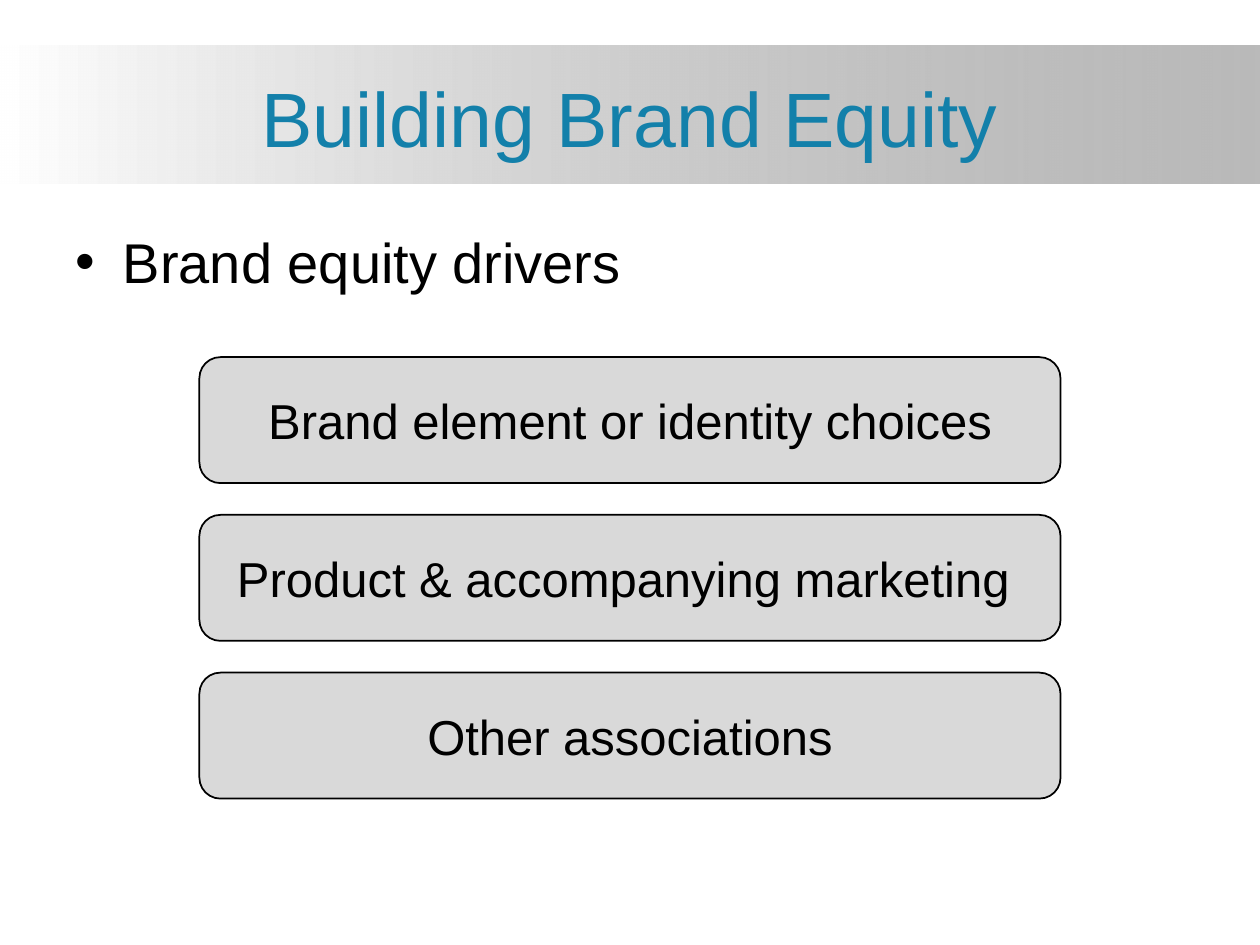
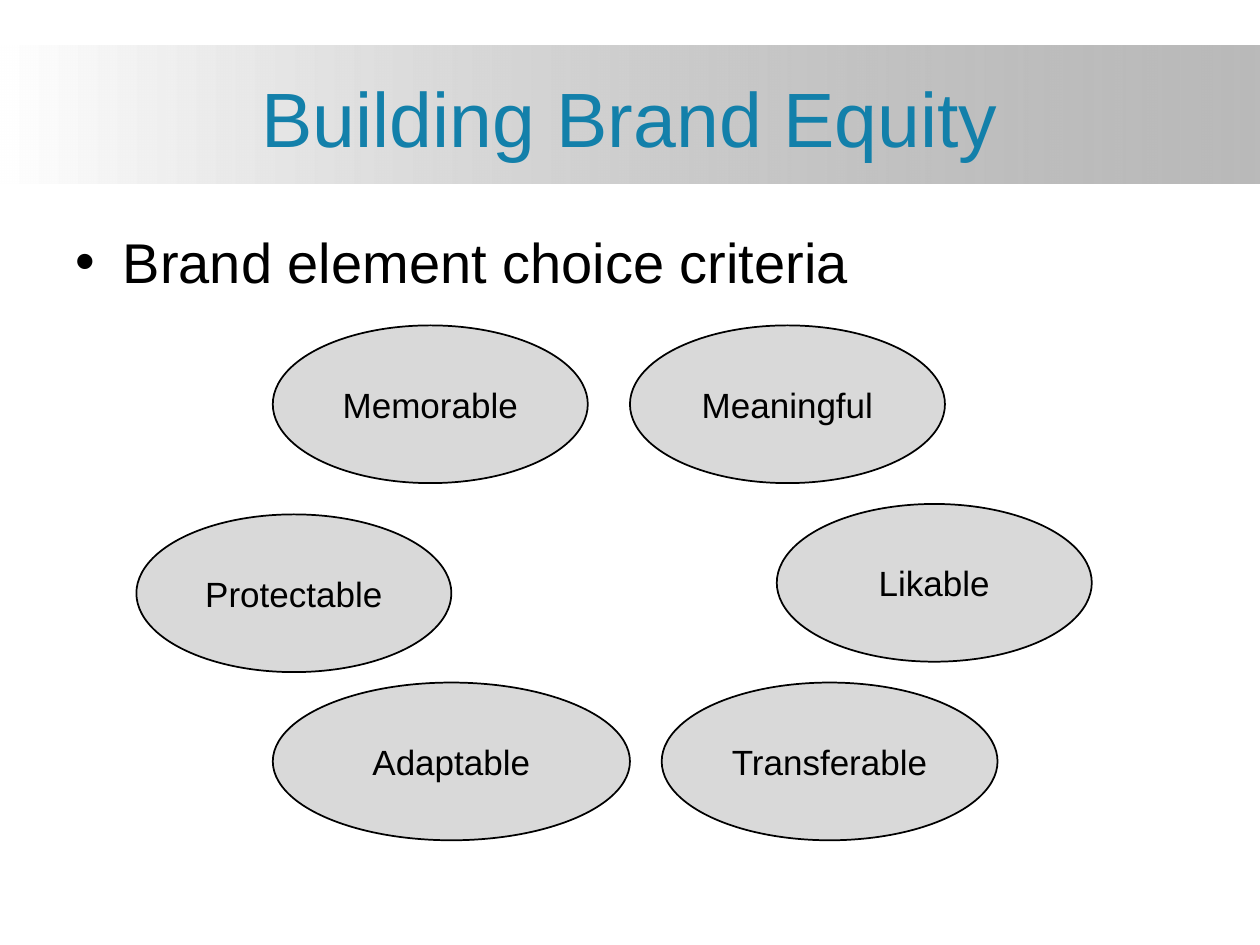
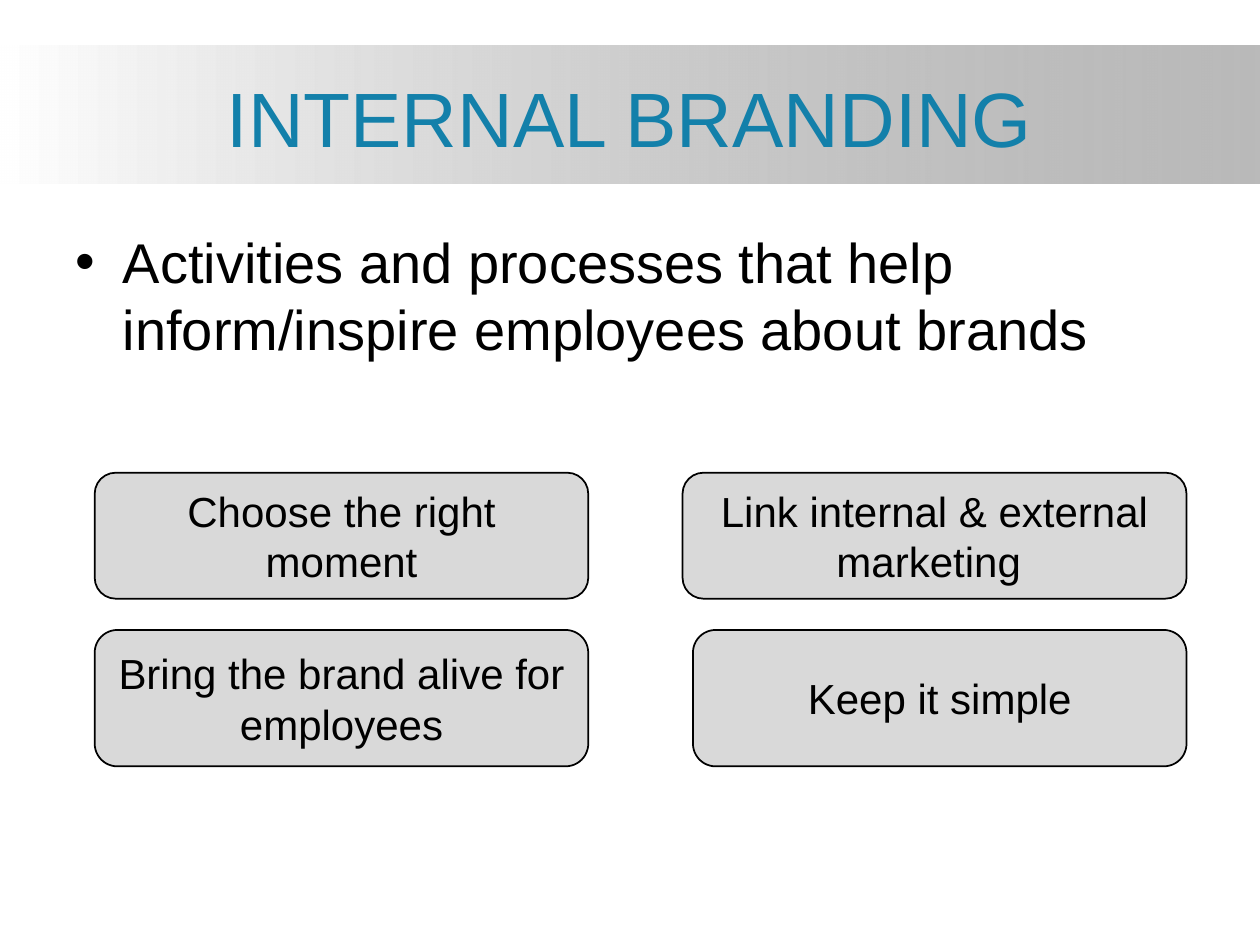
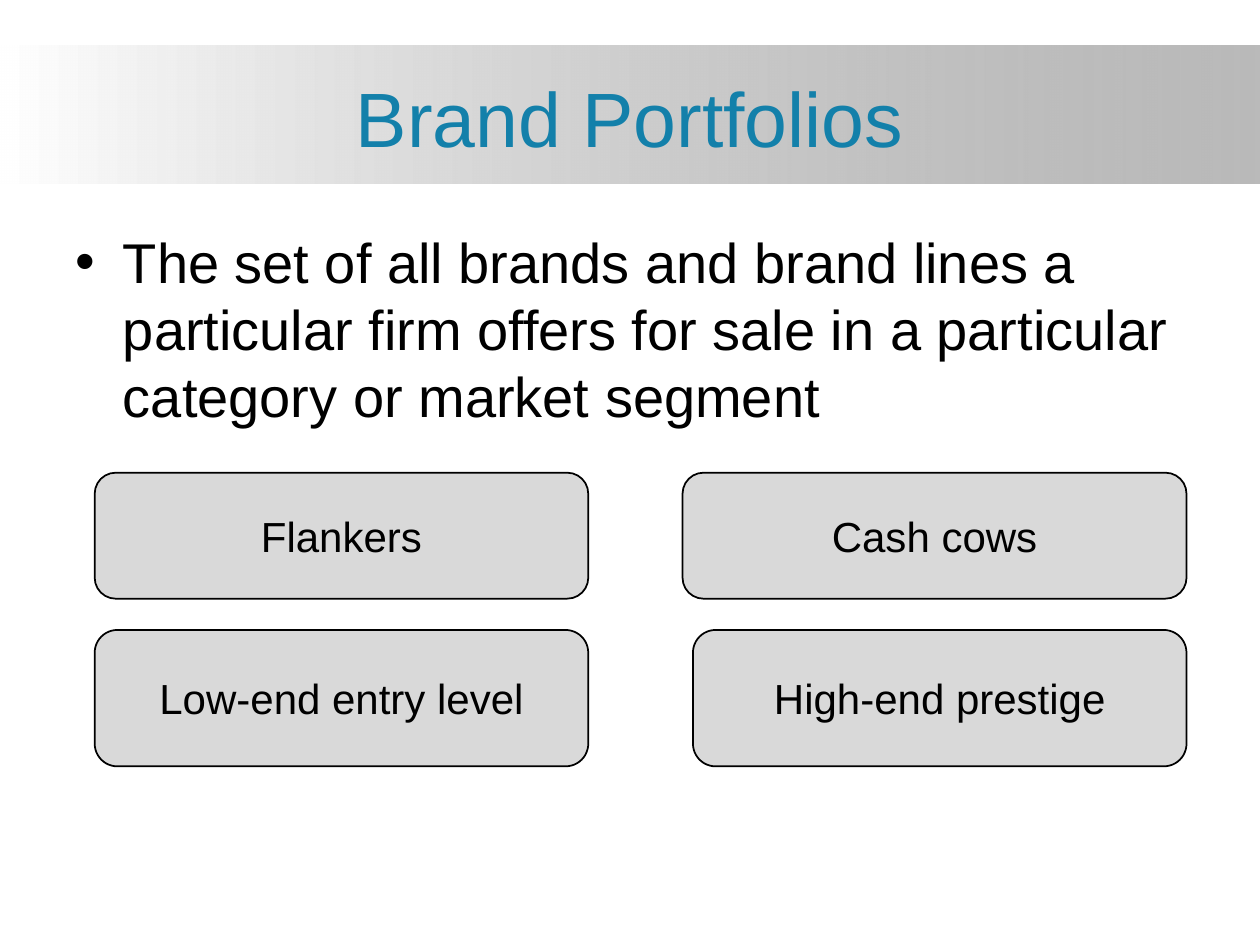
from lxml.etree import SubElement
from pptx import Presentation
from pptx.dml.color import RGBColor
from pptx.enum.shapes import MSO_SHAPE as Preset
from pptx.enum.text import MSO_ANCHOR as Anchor, MSO_AUTO_SIZE as AutoSize, PP_ALIGN as Align
from pptx.oxml.ns import qn
from pptx.util import Cm, Pt

FONT = "Arial"
WHITE, BLACK, GREY, LIGHT_GREY, BLUE = "FFFFFF", "000000", "808080", "D9D9D9", "1380AA"
SLIDE_WIDTH, SLIDE_HEIGHT = 25.4, 19.05
MARGIN = 1.27

# Left, top, width and height of the four boxes, column by column
FOUR_BOXES = [
    (1.91, 9.53, 9.95, 2.54),
    (1.91, 12.7, 9.95, 2.75),
    (13.76, 9.53, 10.16, 2.54),
    (13.97, 12.7, 9.95, 2.75),
]


def color(hex_string):
    return RGBColor.from_string(hex_string)


def place(shape, left, top, width, height):
    shape.left, shape.top, shape.width, shape.height = map(Cm, (left, top, width, height))


def set_text(shape, text, size=24, fill=BLACK, align=Align.CENTER, anchor=Anchor.MIDDLE):
    frame = shape.text_frame
    frame.word_wrap = True
    frame.auto_size = AutoSize.NONE
    frame.vertical_anchor = anchor
    paragraph = frame.paragraphs[0]
    paragraph.text = text
    paragraph.alignment = align
    paragraph.space_before = Pt(0)
    font = paragraph.runs[0].font
    font.name, font.size = FONT, Pt(size)
    font.color.rgb = color(fill)


def add_title_band(presentation, slide):
    """Draw the gradient band, then move it to the back of the slide's layout."""
    band = slide.shapes.add_shape(Preset.RECTANGLE, 0, Cm(0.91), presentation.slide_width, Cm(2.8))
    band.shadow.inherit = False
    band.line.fill.background()
    band.fill.gradient()
    band.fill.gradient_angle = 0
    for stop, position, shade in zip(band.fill.gradient_stops, (0, 1), (WHITE, GREY)):
        stop.position = position
        stop.color.rgb = color(shade)
    end_color = list(band.element.iter(qn("a:srgbClr")))[-1]
    SubElement(end_color, qn("a:alpha"), val="54000")
    slide.slide_layout.shapes.element.insert(2, band.element)


def add_slide(presentation, title, bullet, body_height):
    slide = presentation.slides.add_slide(presentation.slide_layouts[1])
    heading, body = slide.placeholders
    width = SLIDE_WIDTH - 2 * MARGIN
    place(heading, MARGIN, 0.76, width, 3.18)
    set_text(heading, title, size=44, fill=BLUE)
    place(body, MARGIN, 4.45, width, body_height)
    set_text(body, bullet, size=32, align=Align.LEFT, anchor=Anchor.TOP)
    return slide


def add_label(slide, preset, text, box, size):
    """Add an outlined grey shape with centred text."""
    shape = slide.shapes.add_shape(preset, *map(Cm, box))
    shape.shadow.inherit = False
    shape.fill.solid()
    shape.fill.fore_color.rgb = color(LIGHT_GREY)
    shape.line.color.rgb = color(BLACK)
    shape.line.width = Pt(1)
    set_text(shape, text, size=size)


def add_stack(slide, texts, top=7.2, width=17.36, height=2.54, gap=0.64):
    left = (SLIDE_WIDTH - width) / 2
    for row, text in enumerate(texts):
        box = (left, top + row * (height + gap), width, height)
        add_label(slide, Preset.ROUNDED_RECTANGLE, text, box, size=28)


def add_ring(slide, ovals, height=3.18):
    for text, left, top, width in ovals:
        add_label(slide, Preset.OVAL, text, (left, top, width, height), size=20)


def add_four_boxes(slide, texts):
    for text, box in zip(texts, FOUR_BOXES):
        add_label(slide, Preset.ROUNDED_RECTANGLE, text, box, size=24)


def main():
    presentation = Presentation()
    presentation.slide_width, presentation.slide_height = Cm(SLIDE_WIDTH), Cm(SLIDE_HEIGHT)

    drivers = add_slide(presentation, "Building Brand Equity", "Brand equity drivers", 2.12)
    add_title_band(presentation, drivers)
    add_stack(drivers, [
        "Brand element or identity choices",
        "Product & accompanying marketing ",
        "Other associations",
    ])

    criteria = add_slide(presentation, "Building Brand Equity", "Brand element choice criteria", 2.33)
    add_ring(criteria, [
        ("Memorable", 5.5, 6.56, 6.35),
        ("Meaningful", 12.7, 6.56, 6.35),
        ("Likable", 15.66, 10.16, 6.35),
        ("Transferable", 13.34, 13.76, 6.77),
        ("Adaptable", 5.5, 13.76, 7.2),
        ("Protectable", 2.75, 10.37, 6.35),
    ])

    internal = add_slide(
        presentation, "INTERNAL BRANDING",
        "Activities and processes that help inform/inspire employees about brands", 3.18)
    add_four_boxes(internal, [
        "Choose the right moment",
        "Bring the brand alive for employees",
        "Link internal & external marketing ",
        "Keep it simple",
    ])

    portfolios = add_slide(
        presentation, "Brand Portfolios",
        "The set of all brands and brand lines a particular firm offers for sale "
        "in a particular category or market segment", 12.57)
    add_four_boxes(portfolios, [
        "Flankers", "Low-end entry level", "Cash cows", "High-end prestige",
    ])

    presentation.save("out.pptx")


if __name__ == "__main__":
    main()
